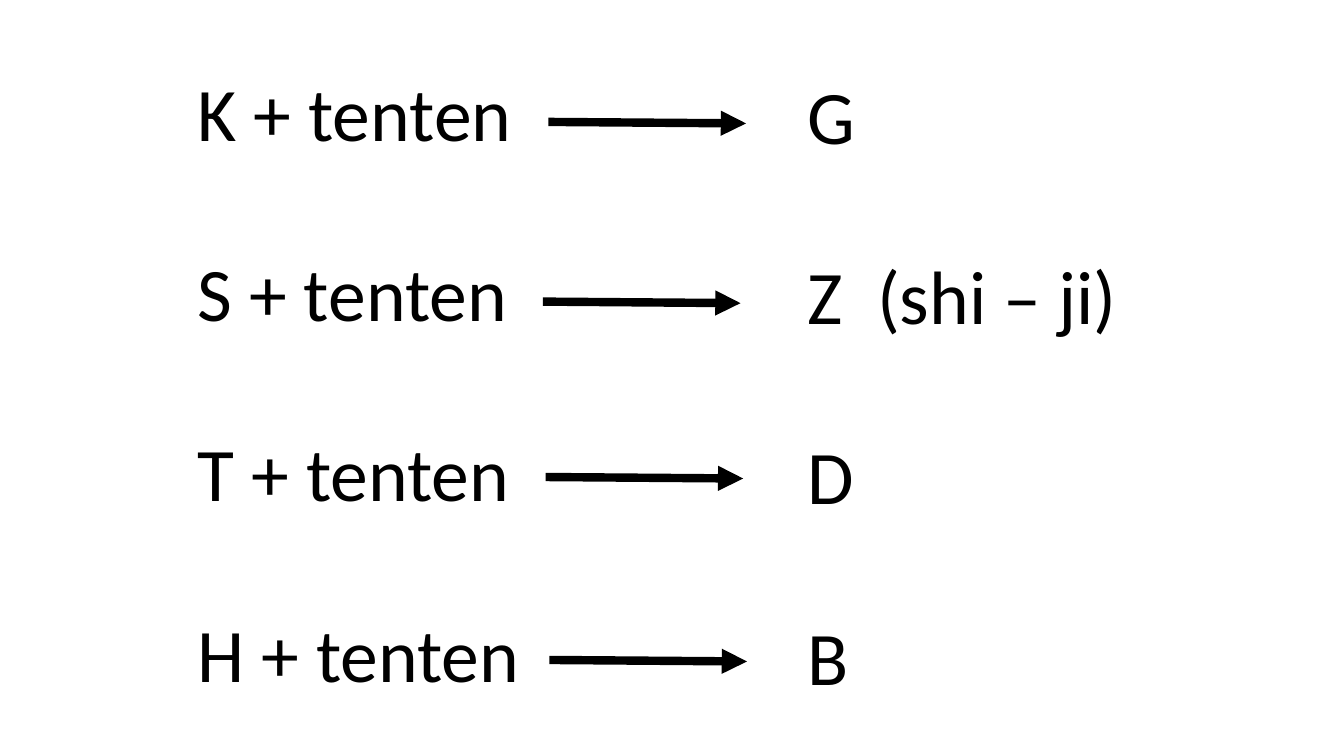
"""Build a slide showing how tenten marks change Japanese consonants."""
from dataclasses import dataclass

import pptx
import pptx.dml.color
import pptx.enum.dml
import pptx.enum.shapes
import pptx.enum.text
import pptx.oxml
import pptx.oxml.ns
import pptx.slide
import pptx.util

BLACK = pptx.dml.color.RGBColor(0, 0, 0)
WIDTH = pptx.util.Inches(13.33)
HEIGHT = pptx.util.Inches(7.5)
COLUMN_WIDTH = 0.3
COLUMN_HEIGHT = 0.86
ARROW_RUN = 0.147
ARROW_DROP = 0.002


@dataclass(frozen=True)
class SoundColumn:
    """A column of sounds, placed by shares of the slide."""
    left: float
    top: float
    sounds: tuple[str, ...]


@dataclass(frozen=True)
class ChangeArrow:
    """The start of an arrow, in shares of the slide."""
    left: float
    top: float


COLUMNS = (
    SoundColumn(0.1395, 0.08, tuple(f"{consonant} + tenten" for consonant in "KSTH")),
    SoundColumn(0.5934, 0.084, ("G", "Z  (shi – ji)", "D", "B")),
)
ARROWS = (
    ChangeArrow(0.4081, 0.1613),
    ChangeArrow(0.404, 0.399),
    ChangeArrow(0.406, 0.631),
    ChangeArrow(0.4088, 0.873),
)


def across(share: float) -> int:
    """Return a share of the slide width."""
    return round(WIDTH * share)


def down(share: float) -> int:
    """Return a share of the slide height."""
    return round(HEIGHT * share)


def draw_column(slide: pptx.slide.Slide, column: SoundColumn) -> None:
    """Write the sounds of one column, a blank line's height apart."""
    frame = slide.shapes.add_textbox(
        across(column.left), down(column.top), across(COLUMN_WIDTH), down(COLUMN_HEIGHT)
    ).text_frame
    frame.word_wrap = True
    frame.auto_size = pptx.enum.text.MSO_AUTO_SIZE.SHAPE_TO_FIT_TEXT
    for row, sound in enumerate(column.sounds):
        line = frame.add_paragraph() if row else frame.paragraphs[0]
        if row:
            line.space_before = pptx.util.Pt(64)
        run = line.add_run()
        run.text = sound
        run.font.name = "Calibri"
        run.font.size = pptx.util.Pt(54)
        run.font.color.rgb = BLACK


def draw_arrow(slide: pptx.slide.Slide, arrow: ChangeArrow) -> None:
    """Draw one thick arrow with a triangular head."""
    connector = slide.shapes.add_connector(
        pptx.enum.shapes.MSO_CONNECTOR.STRAIGHT,
        across(arrow.left), down(arrow.top),
        across(arrow.left + ARROW_RUN), down(arrow.top + ARROW_DROP),
    )
    connector.line.color.rgb = BLACK
    connector.line.width = pptx.util.Pt(6)
    properties = connector.element.spPr
    head = pptx.oxml.parse_xml(
        f'<a:tailEnd {pptx.oxml.ns.nsdecls("a")} type="triangle"/>'
    )
    properties.find(pptx.oxml.ns.qn("a:ln")).append(head)
    properties.append(
        pptx.oxml.parse_xml(f'<a:effectLst {pptx.oxml.ns.nsdecls("a")}/>')
    )


def main() -> None:
    """Assemble and save the slide."""
    deck = pptx.Presentation()
    deck.slide_width = WIDTH
    deck.slide_height = HEIGHT
    slide = deck.slides.add_slide(deck.slide_layouts[6])
    for column in COLUMNS:
        draw_column(slide, column)
    for arrow in ARROWS:
        draw_arrow(slide, arrow)
    deck.save("out.pptx")


if __name__ == "__main__":
    main()
